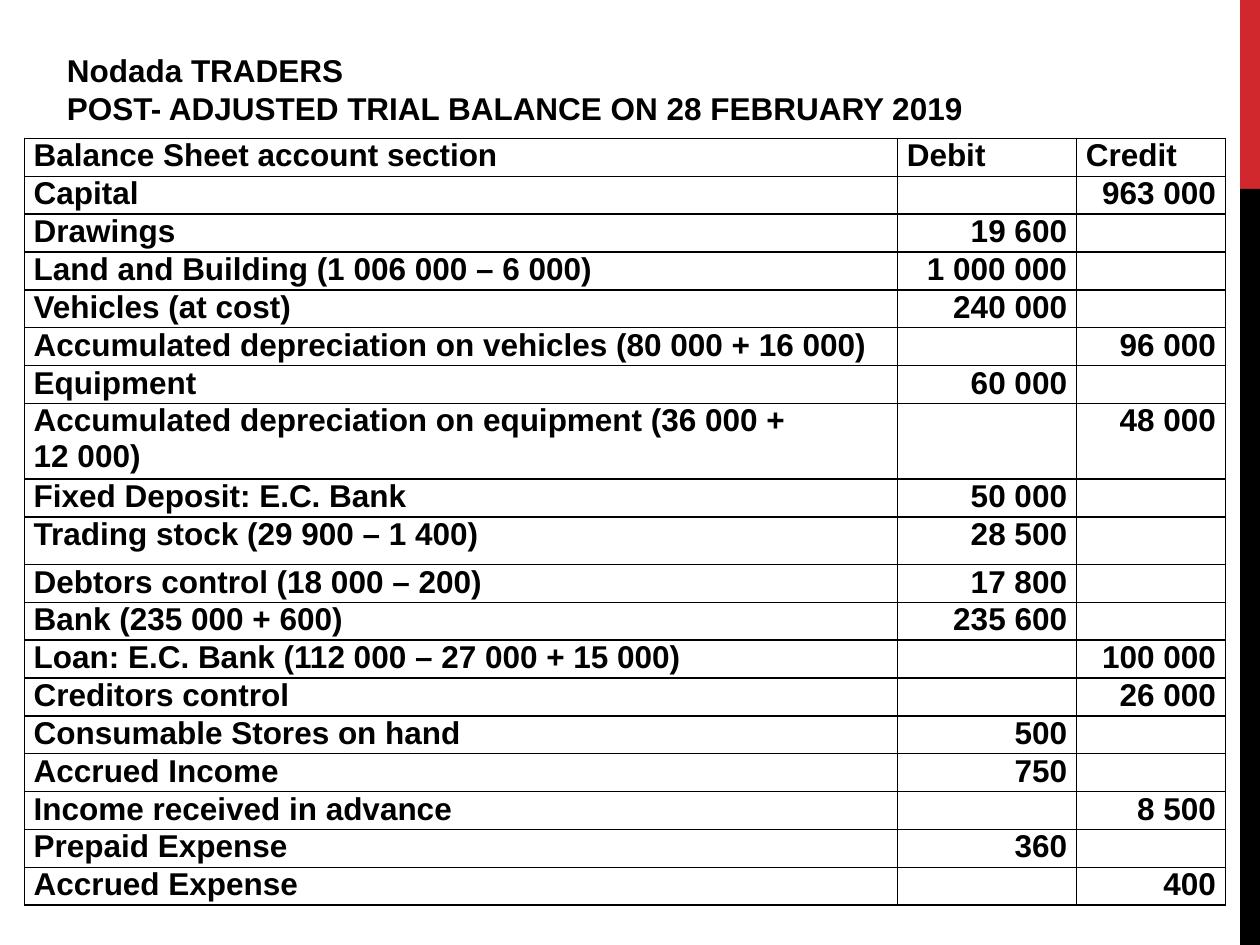
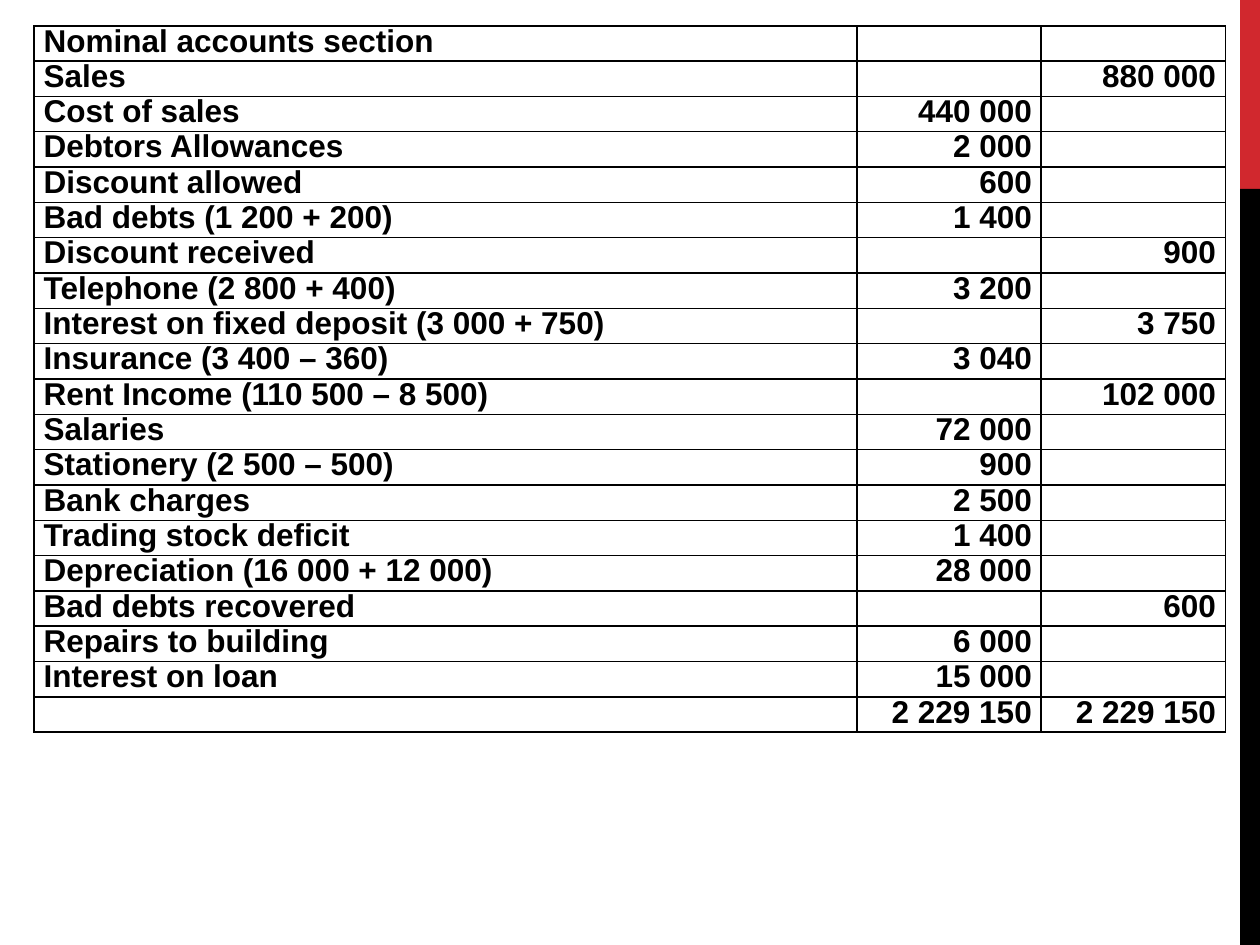
from dataclasses import dataclass, field
from itertools import pairwise
from typing import NamedTuple

from lxml import etree
from pptx import Presentation
from pptx import util as u
from pptx.dml import color
from pptx.enum import shapes, text
from pptx.oxml import ns

RED = "D1282E"
BLACK = "000000"
FONT = "Arial"
TEXT_SIZE = 18
HARD_SPACE = chr(160)
EDGES = ("a:lnL", "a:lnR", "a:lnT", "a:lnB")


class Band(NamedTuple):
    top: float
    height: float
    fill: str


class Entry(NamedTuple):
    account: str
    debit: str = ""
    credit: str = ""


@dataclass
class Section:
    left: float
    top: float
    height: float
    columns: tuple[float, float, float]
    entries: list[Entry]
    line_spacing: float = 1.0
    tall_rows: dict[int, float] = field(default_factory=dict)


BANDS = (Band(0, 3.81, RED), Band(3.81, 15.24, BLACK))

HEADING = ("Nodada TRADERS", "POST- ADJUSTED TRIAL BALANCE ON 28 FEBRUARY 2019")

BALANCE_SHEET = Section(
    left=0.49, top=2.79, height=15.46, columns=(17.6, 3.61, 3.0),
    tall_rows={7: 1.52, 9: 0.96},
    entries=[
        Entry("Balance Sheet account section", "Debit", "Credit"),
        Entry("Capital", credit="963 000"),
        Entry("Drawings", "19 600"),
        Entry("Land and Building (1 006 000 – 6 000)", "1 000 000"),
        Entry("Vehicles (at cost)", "240 000"),
        Entry("Accumulated depreciation on vehicles (80 000 + 16 000)", credit="96 000"),
        Entry("Equipment", "60 000"),
        Entry("Accumulated depreciation on equipment (36 000 + 12 000)", credit="48 000"),
        Entry("Fixed Deposit: E.C. Bank", "50 000"),
        Entry("Trading stock (29 900 – 1 400)", "28 500"),
        Entry("Debtors control (18 000 – 200)", "17 800"),
        Entry("Bank (235 000 + 600)", "235 600"),
        Entry("Loan: E.C. Bank (112 000 – 27 000 + 15 000)", credit="100 000"),
        Entry("Creditors control", credit="26 000"),
        Entry("Consumable Stores on hand", "500"),
        Entry("Accrued Income", "750"),
        Entry("Income received in advance", credit="8 500"),
        Entry("Prepaid Expense", "360"),
        Entry("Accrued Expense", credit="400"),
    ],
)

NOMINAL = Section(
    left=0.69, top=0.52, height=14.24, columns=(16.59, 3.71, 3.71),
    line_spacing=0.93,
    entries=[
        Entry("Nominal accounts section"),
        Entry("Sales", credit="880 000"),
        Entry("Cost of sales", "440 000"),
        Entry("Debtors Allowances", "2 000"),
        Entry("Discount allowed", "600"),
        Entry("Bad debts (1 200 + 200)", "1 400"),
        Entry("Discount received", credit="900"),
        Entry("Telephone (2 800 + 400)", "3 200"),
        Entry("Interest on fixed deposit (3 000 + 750)", credit="3 750"),
        Entry("Insurance (3 400 – 360)", "3 040"),
        Entry("Rent Income (110 500 – 8 500)", credit="102 000"),
        Entry("Salaries", "72 000"),
        Entry("Stationery (2 500 – 500)", "900"),
        Entry("Bank charges", "2 500"),
        Entry("Trading stock deficit", "1 400"),
        Entry("Depreciation (16 000 + 12 000)", "28 000"),
        Entry("Bad debts recovered", credit="600"),
        Entry("Repairs to building", "6 000"),
        Entry("Interest on loan", "15 000"),
        Entry("", "2 229 150", "2 229 150"),
    ],
)


def rgb(value: str) -> color.RGBColor:
    return color.RGBColor.from_string(value)


def keep_numbers_whole(content: str) -> str:
    words = content.split(" ")
    joined = words[0]
    for previous, word in pairwise(words):
        within_number = previous[-1:].isdigit() and word[:1].isdigit()
        joined += (HARD_SPACE if within_number else " ") + word
    return joined


def style_paragraph(paragraph, line_spacing: float) -> None:
    paragraph.line_spacing = line_spacing
    for run in paragraph.runs:
        run.font.name = FONT
        run.font.size = u.Pt(TEXT_SIZE)
        run.font.bold = True
        run.font.color.rgb = rgb(BLACK)


def draw_band(slide, band: Band) -> None:
    strip = slide.shapes.add_shape(
        shapes.MSO_SHAPE.RECTANGLE,
        u.Cm(25), u.Cm(band.top), u.Cm(0.4), u.Cm(band.height))
    strip.shadow.inherit = False
    strip.fill.solid()
    strip.fill.fore_color.rgb = rgb(band.fill)
    strip.line.fill.background()


def draw_heading(slide, lines: tuple[str, ...]) -> None:
    heading = slide.shapes.add_textbox(u.Cm(1.1), u.Cm(0.91), u.Cm(23.6), u.Cm(1.8))
    frame = heading.text_frame
    frame.word_wrap = True
    frame.text = "\n".join(lines)
    for paragraph in frame.paragraphs:
        style_paragraph(paragraph, 1.0)


def rule_cell(cell) -> None:
    properties = cell._tc.get_or_add_tcPr()
    for edge in EDGES:
        line = etree.SubElement(properties, ns.qn(edge), w=str(u.Pt(1)))
        fill = etree.SubElement(line, ns.qn("a:solidFill"))
        etree.SubElement(fill, ns.qn("a:srgbClr"), val=str(rgb(BLACK)))
    cell.fill.background()


def fill_cell(cell, content: str, align_right: bool, line_spacing: float) -> None:
    rule_cell(cell)
    cell.margin_left = cell.margin_right = u.Cm(0.19)
    cell.margin_top = cell.margin_bottom = 0
    paragraph = cell.text_frame.paragraphs[0]
    if not content:
        etree.SubElement(paragraph._p, ns.qn("a:endParaRPr"), sz="1200")
        return
    paragraph.text = keep_numbers_whole(content)
    if align_right:
        paragraph.alignment = text.PP_ALIGN.RIGHT
    style_paragraph(paragraph, line_spacing)


def draw_section(slide, section: Section) -> None:
    count = len(section.entries)
    ledger = slide.shapes.add_table(
        count, len(section.columns), u.Cm(section.left), u.Cm(section.top),
        u.Cm(sum(section.columns)), u.Cm(section.height)).table
    ledger.first_row = False
    ledger.horz_banding = False
    for column, width in zip(ledger.columns, section.columns):
        column.width = u.Cm(width)

    tall = section.tall_rows
    regular = (section.height - sum(tall.values())) / (count - len(tall))
    for row_index, entry in enumerate(section.entries):
        ledger.rows[row_index].height = u.Cm(tall.get(row_index, regular))
        for column_index, content in enumerate(entry):
            is_amount = row_index > 0 and column_index > 0
            fill_cell(ledger.cell(row_index, column_index), content,
                      is_amount, section.line_spacing)


def add_slide(deck):
    slide = deck.slides.add_slide(deck.slide_layouts[6])
    for band in BANDS:
        draw_band(slide, band)
    return slide


def main() -> None:
    deck = Presentation()
    deck.slide_width = u.Cm(25.4)
    deck.slide_height = u.Cm(19.05)

    balance_slide = add_slide(deck)
    draw_heading(balance_slide, HEADING)
    draw_section(balance_slide, BALANCE_SHEET)

    draw_section(add_slide(deck), NOMINAL)
    deck.save("out.pptx")


if __name__ == "__main__":
    main()
